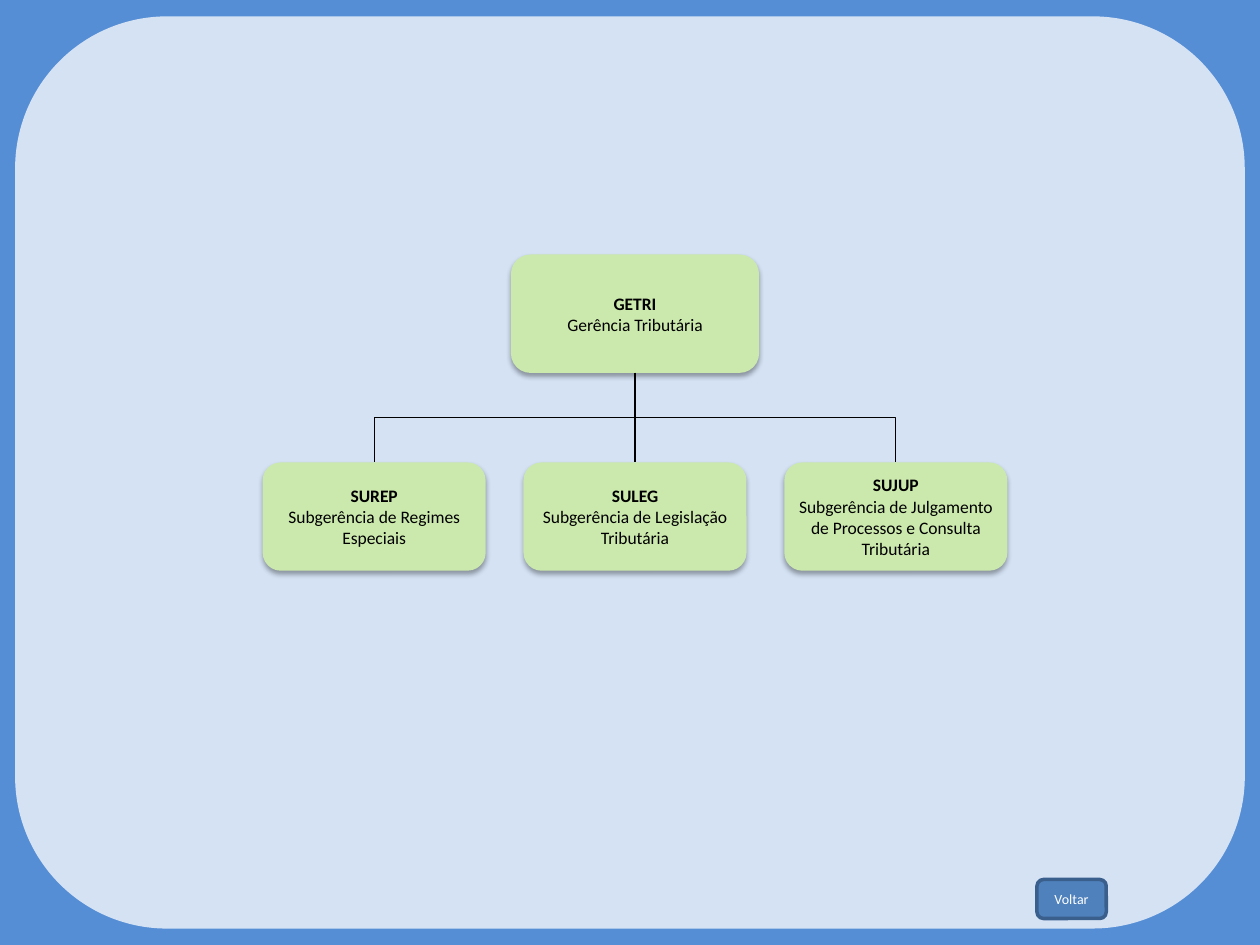
from dataclasses import dataclass

from lxml.etree import SubElement
from pptx import Presentation
from pptx.dml.color import RGBColor
from pptx.enum.shapes import MSO_CONNECTOR, MSO_SHAPE
from pptx.enum.text import MSO_ANCHOR, PP_ALIGN
from pptx.oxml.ns import qn
from pptx.util import Inches, Pt


@dataclass(frozen=True)
class Theme:
    font: str = "Calibri"
    backdrop: str = "558ED5"
    panel: str = "D4E2F4"
    unit: str = "CCE9AD"
    ink: str = "000000"
    button: str = "4F81BD"
    button_edge: str = "3A5F8C"
    button_ink: str = "FFFFFF"
    unit_size: float = 10
    button_size: float = 8


THEME = Theme()
BOTTOM, TOP = 2, 0

# Chart geometry in inches
AXIS = 5.04
PITCH = 2.07
MANAGER_TOP, MANAGER_SIZE = 2.02, (1.97, 0.94)
TEAM_TOP, TEAM_SIZE = 3.67, (1.77, 0.86)

TEAMS = [
    ("SUREP", "Subgerência de Regimes Especiais"),
    ("SULEG", "Subgerência de Legislação Tributária"),
    ("SUJUP", "Subgerência de Julgamento de Processos e Consulta Tributária"),
]


def rgb(value):
    return RGBColor.from_string(value)


def add_rounded(slide, left, top, width, height, fill, edge=None):
    box = slide.shapes.add_shape(MSO_SHAPE.ROUNDED_RECTANGLE, Inches(left),
                                 Inches(top), Inches(width), Inches(height))
    box.shadow.inherit = False
    box.fill.solid()
    box.fill.fore_color.rgb = rgb(fill)
    if edge:
        box.line.color.rgb = rgb(edge)
        box.line.width = Pt(2)
    else:
        box.line.fill.background()
    return box


def write(paragraph, text, *, size, color, bold=False):
    paragraph.alignment = PP_ALIGN.CENTER
    run = paragraph.add_run()
    run.text = text
    run.font.name = THEME.font
    run.font.size = Pt(size)
    run.font.bold = bold
    run.font.color.rgb = rgb(color)


def add_shadow(box):
    effects = box._element.spPr.find(qn("a:effectLst"))
    shadow = SubElement(effects, qn("a:outerShdw"), blurRad=str(Pt(3.1)),
                        dist=str(Pt(1.8)), dir="5400000", rotWithShape="0")
    color = SubElement(shadow, qn("a:srgbClr"), val=THEME.ink)
    SubElement(color, qn("a:alpha"), val="35000")


def add_unit(slide, center, top, size, acronym, title, inset=0.1):
    width, height = size
    unit = add_rounded(slide, center - width / 2, top, width, height, THEME.unit)
    add_shadow(unit)
    frame = unit.text_frame
    frame.word_wrap = True
    frame.vertical_anchor = MSO_ANCHOR.MIDDLE
    frame.margin_left = frame.margin_right = Inches(inset)
    frame.margin_top = frame.margin_bottom = Inches(min(inset, 0.05))
    style = {"size": THEME.unit_size, "color": THEME.ink}
    write(frame.paragraphs[0], acronym, bold=True, **style)
    write(frame.add_paragraph(), title, **style)
    return unit


def turn_elbow(link):
    """Rotate an elbow so that it leaves downwards instead of sideways."""
    run, drop = link.end_x - link.begin_x, link.end_y - link.begin_y
    mid_x = (link.begin_x + link.end_x) // 2
    mid_y = (link.begin_y + link.end_y) // 2
    link.width, link.height = drop, abs(run)
    link.left, link.top = mid_x - drop // 2, mid_y - abs(run) // 2
    frame = link._element.spPr.find(qn("a:xfrm"))
    frame.attrib.pop("flipH", None)
    if run > 0:
        frame.set("flipH", "1")
    frame.set("rot", "16200000" if run > 0 else "5400000")


def add_link(slide, manager, team, straight):
    kind = MSO_CONNECTOR.STRAIGHT if straight else MSO_CONNECTOR.ELBOW
    link = slide.shapes.add_connector(kind, 0, 0, 0, 0)
    link.begin_connect(manager, BOTTOM)
    link.end_connect(team, TOP)
    if not straight:
        turn_elbow(link)
    link.line.color.rgb = rgb(THEME.ink)
    link.line.width = Pt(0.75)
    SubElement(link._element.spPr, qn("a:effectLst"))


def add_button(slide, text):
    button = add_rounded(slide, 8.23, 6.98, 0.55, 0.31, THEME.button,
                         THEME.button_edge)
    button.text_frame.vertical_anchor = MSO_ANCHOR.MIDDLE
    write(button.text_frame.paragraphs[0], text, size=THEME.button_size,
          color=THEME.button_ink)


def main():
    deck = Presentation()
    deck.slide_width, deck.slide_height = Inches(10), Inches(7.5)
    slide = deck.slides.add_slide(deck.slide_layouts[6])

    # Backdrop and panel
    slide.background.fill.solid()
    slide.background.fill.fore_color.rgb = rgb(THEME.backdrop)
    add_rounded(slide, 0.12, 0.13, 9.76, 7.24, THEME.panel)

    # Manager, with the teams spread evenly below
    manager = add_unit(slide, AXIS, MANAGER_TOP, MANAGER_SIZE,
                       "GETRI", "Gerência Tributária")
    for step, (acronym, title) in enumerate(TEAMS, start=-1):
        team = add_unit(slide, AXIS + step * PITCH, TEAM_TOP, TEAM_SIZE,
                        acronym, title, inset=0.04)
        add_link(slide, manager, team, straight=step == 0)

    # Navigation
    add_button(slide, "Voltar")

    deck.save("out.pptx")


if __name__ == "__main__":
    main()
